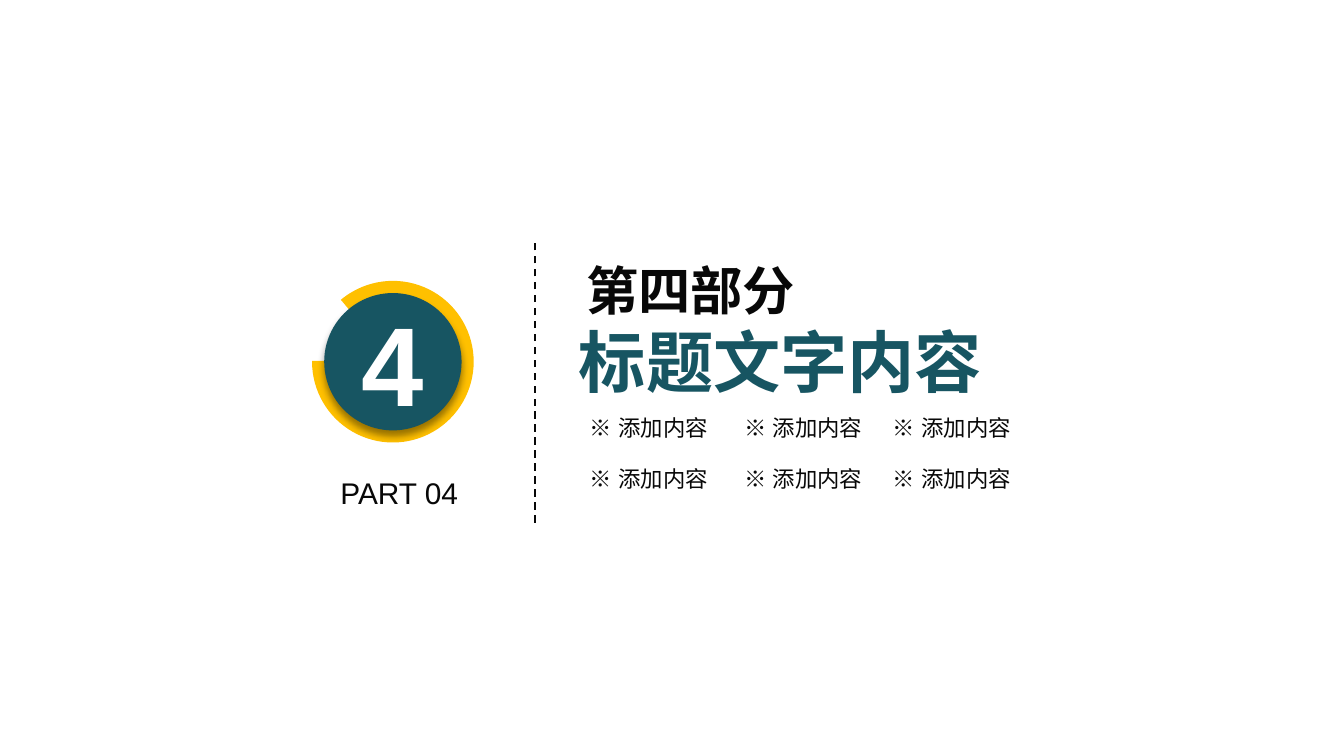
from lxml import etree
from pptx import Presentation
from pptx.dml.color import RGBColor
from pptx.enum import dml, shapes, text
from pptx.oxml import ns
from pptx.util import Pt

INK = RGBColor(0x08, 0x08, 0x08)
TEAL = RGBColor(0x17, 0x55, 0x62)
GOLD = RGBColor(0xFF, 0xC0, 0x00)
WHITE = RGBColor(0xFF, 0xFF, 0xFF)


def write(para, words, size=12, color=INK, bold=False, align=None, face="Arial"):
    """Add a run of text in the given format."""
    if align is not None:
        para.alignment = align
    run = para.add_run()
    run.text = words
    font = run.font
    font.name, font.size, font.bold = face, Pt(size), bold
    font.color.rgb = color
    # East Asian letters use the same face
    east = etree.SubElement(font._element, ns.qn("a:ea"))
    east.set("typeface", face)


class Deck:
    def __init__(self, wide, high):
        self.prs = Presentation()
        self.prs.slide_width, self.prs.slide_height = Pt(wide), Pt(high)
        self.slide = self.prs.slides.add_slide(self.prs.slide_layouts[6])

    def box(self, x, y, w, h, pad=(0, 0), wrap=True):
        shape = self.slide.shapes.add_textbox(Pt(x), Pt(y), Pt(w), Pt(h))
        frame = shape.text_frame
        frame.word_wrap = wrap
        frame.auto_size = text.MSO_AUTO_SIZE.SHAPE_TO_FIT_TEXT
        frame.margin_left = frame.margin_right = Pt(pad[0])
        frame.margin_top = frame.margin_bottom = Pt(pad[1])
        return frame

    def shape(self, kind, x, y, size, fill):
        shape = self.slide.shapes.add_shape(kind, Pt(x), Pt(y), Pt(size), Pt(size))
        shape.shadow.inherit = False
        shape.fill.solid()
        shape.fill.fore_color.rgb = fill
        shape.line.fill.background()
        return shape

    def shade(self, shape, blur, dist, alpha):
        """Cast a soft black shadow straight down."""
        effects = shape._element.spPr.find(ns.qn("a:effectLst"))
        outer = etree.SubElement(effects, ns.qn("a:outerShdw"), blurRad=str(Pt(blur)),
                                 dist=str(Pt(dist)), dir="5400000", algn="t", rotWithShape="0")
        tint = etree.SubElement(outer, ns.qn("a:srgbClr"), val="000000")
        etree.SubElement(tint, ns.qn("a:alpha"), val=str(alpha * 1000))

    def rule(self, x, top, end):
        line = self.slide.shapes.add_connector(
            shapes.MSO_CONNECTOR.STRAIGHT, Pt(x), Pt(end), Pt(x), Pt(top))
        line.line.color.rgb = INK
        line.line.width = Pt(1)
        line.line.dash_style = dml.MSO_LINE.DASH
        etree.SubElement(line._element.spPr, ns.qn("a:effectLst"))


def main():
    deck = Deck(720, 405)
    mid = text.PP_ALIGN.CENTER

    # Section title
    title = deck.box(303.1, 134.6, 232.6, 85, pad=(7.2, 3.6), wrap=False)
    head = title.paragraphs[0]
    write(head, " ", size=14, bold=True)
    write(head, "第四部分", size=28, bold=True)
    write(title.add_paragraph(), "标题文字内容", size=36, color=TEAL, bold=True, align=mid)

    # Divider and part label
    deck.rule(286.4, 129, 280)
    write(deck.box(182.4, 254.2, 71.3, 19.4).paragraphs[0], "PART 04", size=16)

    # Grid of topics
    for y in (219.6, 247):
        for x in (311, 393.8, 473.4):
            topic = deck.box(x, y, 80, 19.4, pad=(5, 2.2))
            write(topic.paragraphs[0], "※ 添加内容")

    # Number badge: ring and disc share a centre
    x, y = 210.5, 193.8
    ring, disc = 86.6, 73.6
    arc = deck.shape(shapes.MSO_SHAPE.BLOCK_ARC, x - ring / 2, y - ring / 2, ring, GOLD)
    for i, value in enumerate((137.98, 108.39, 0.23)):
        arc.adjustments[i] = value
    badge = deck.shape(shapes.MSO_SHAPE.OVAL, x - disc / 2, y - disc / 2, disc, TEAL)
    deck.shade(badge, blur=4, dist=3, alpha=40)
    badge.text_frame.vertical_anchor = text.MSO_ANCHOR.MIDDLE
    write(badge.text_frame.paragraphs[0], "4", size=60, color=WHITE, bold=True, align=mid)

    deck.prs.save("out.pptx")


if __name__ == "__main__":
    main()
